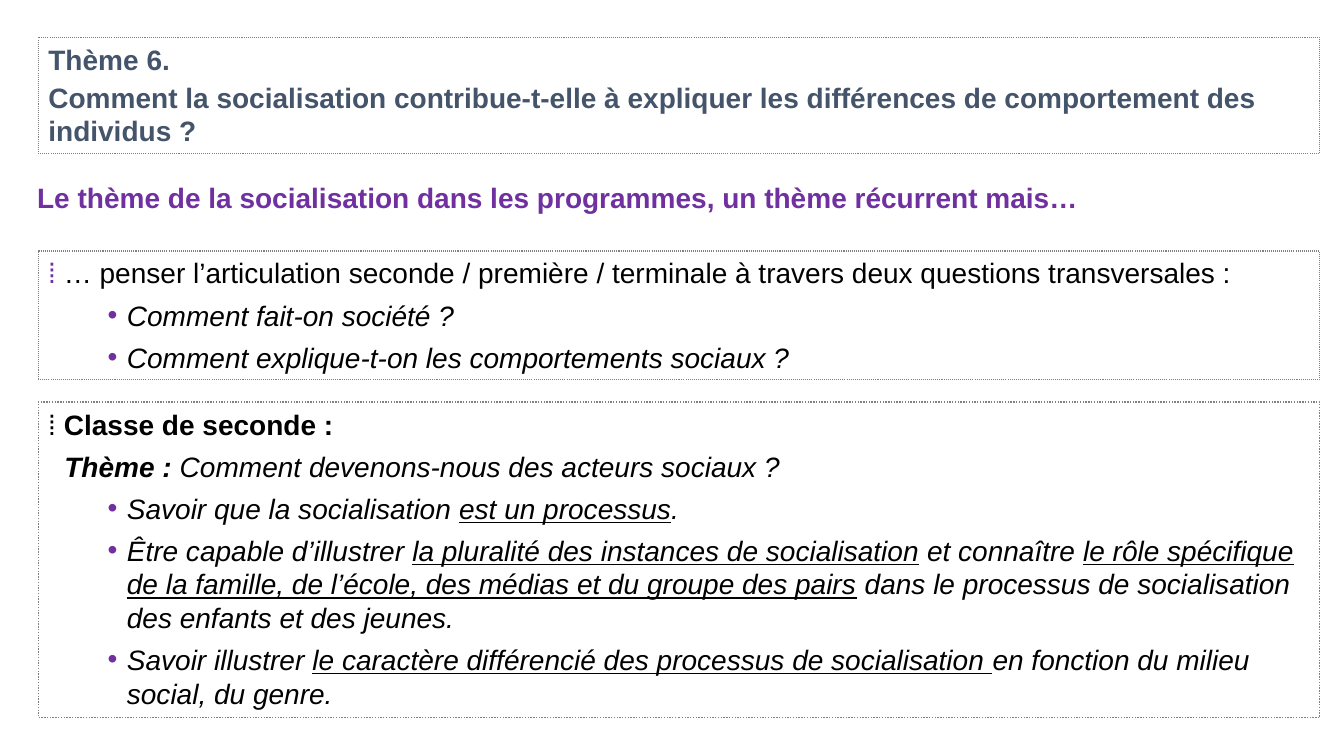
from pptx import Presentation
from pptx.dml.color import RGBColor
from pptx.enum.dml import MSO_LINE
from pptx.enum.shapes import MSO_SHAPE
from pptx.enum.text import MSO_ANCHOR, MSO_AUTO_SIZE, PP_ALIGN
from pptx.oxml import parse_xml
from pptx.oxml.ns import nsdecls
from pptx.util import Inches, Pt

RECT = MSO_SHAPE.RECTANGLE
DOTTED = MSO_LINE.ROUND_DOT
TOP, LEFT = MSO_ANCHOR.TOP, PP_ALIGN.LEFT
NO_FIT = MSO_AUTO_SIZE.NONE

THEME = {
    "font": "Arial", "size": Pt(20), "gap": Pt(6), "title_gap": Pt(3),
    "slate": RGBColor.from_string("44546A"),
    "purple": RGBColor.from_string("7030A0"),
    "black": RGBColor.from_string("000000"),
    "white": RGBColor.from_string("FFFFFF"),
    "grey": RGBColor.from_string("808080"),
}
BOX_LEFT, BOX_WIDTH = Inches(0.38), Inches(12.71)
BULLET_INDENT, BULLET_HANG = Inches(0.78), Inches(-0.19)
THEME_INDENT = Inches(0.16)


def add_text(tf, runs, color="black", bold=False, italic=False,
             gap=THEME["gap"], indent=0, bullet=False):
    """Add a paragraph; runs are (text, overrides) pairs or one string."""
    p = tf.paragraphs[0] if not tf.text else tf.add_paragraph()
    p.alignment, p.space_before = LEFT, gap
    pPr = p._p.get_or_add_pPr()
    pPr.set("marL", str(BULLET_INDENT if bullet else indent))
    pPr.set("indent", str(BULLET_HANG if bullet else 0))
    if bullet:
        ns = nsdecls("a")
        pPr.append(parse_xml(f'<a:buClr {ns}><a:srgbClr val="{THEME["purple"]}"/></a:buClr>'))
        pPr.append(parse_xml(f'<a:buFont {ns} typeface="{THEME["font"]}"/>'))
        pPr.append(parse_xml(f'<a:buChar {ns} char="•"/>'))
    for text, style in [(runs, {})] if isinstance(runs, str) else runs:
        r = p.add_run()
        r.text = text
        r.font.name, r.font.size = THEME["font"], THEME["size"]
        r.font.color.rgb = THEME[style.get("color", color)]
        r.font.bold = style.get("bold", bold)
        r.font.italic = italic
        r.font.underline = style.get("underline", False)


def frame(sp, width=0.75, fill=None):
    """Give a box its dotted outline and top-left text; return its text frame."""
    sp.line.color.rgb, sp.line.width = THEME["grey"], Pt(width)
    sp.line.dash_style = DOTTED
    if fill:
        sp.fill.solid()
        sp.fill.fore_color.rgb = THEME[fill]
    else:
        sp.fill.background()
    tf = sp.text_frame
    tf.word_wrap, tf.auto_size, tf.vertical_anchor = True, NO_FIT, TOP
    return tf


prs = Presentation()
prs.slide_width, prs.slide_height = Inches(13.33), Inches(7.5)
s = prs.slides.add_slide(prs.slide_layouts[5])

# Title box
title = s.shapes.title
title.left, title.top = BOX_LEFT, Inches(0.37)
title.width, title.height = BOX_WIDTH, Inches(1.15)
tf = frame(title)
add_text(tf, "Thème 6.", color="slate", bold=True, gap=0)
add_text(tf, "Comment la socialisation contribue-t-elle à expliquer les différences "
         "de comportement des individus ?", color="slate", bold=True, gap=THEME["title_gap"])

# Heading
heading = s.shapes.add_textbox(Inches(0.27), Inches(1.74), Inches(12.87), Inches(0.44))
heading.text_frame.word_wrap = True
add_text(heading.text_frame, "Le thème de la socialisation dans les programmes, "
         "un thème récurrent mais…", color="purple", bold=True)

# Content boxes: top, height, line width, fill, paragraphs
UNDER = {"underline": True}
BULLET = {"italic": True, "bullet": True}
boxes = [
    (2.49, 1.28, 0.75, None, [
        ([("⁞ ", {"color": "purple"}),
          ("… penser l’articulation seconde / première / terminale à travers "
           "deux questions transversales :", {})], {}),
        ("Comment fait-on société ?", BULLET),
        ("Comment explique-t-on les comportements sociaux ?", BULLET),
    ]),
    (3.99, 3.13, 1, "white", [
        ([("⁞ ", {}), ("Classe de seconde :", {"bold": True})], {}),
        ([("Thème : ", {"bold": True}),
          ("Comment devenons-nous des acteurs sociaux ?", {})],
         {"italic": True, "indent": THEME_INDENT}),
        ([("Savoir que la socialisation ", {}), ("est un processus", UNDER), (".", {})], BULLET),
        ([("Être capable d’illustrer ", {}),
          ("la pluralité des instances de socialisation", UNDER),
          (" et connaître ", {}),
          ("le rôle spécifique de la famille, de l’école, des médias et du groupe des pairs", UNDER),
          (" dans le processus de socialisation des enfants et des jeunes.", {})], BULLET),
        ([("Savoir illustrer ", {}),
          ("le caractère différencié des processus de socialisation ", UNDER),
          ("en fonction du milieu social, du genre.", {})], BULLET),
    ]),
]
for top, height, width, fill, paragraphs in boxes:
    sp = s.shapes.add_shape(RECT, BOX_LEFT, Inches(top), BOX_WIDTH, Inches(height))
    sp.shadow.inherit = False
    tf = frame(sp, width, fill)
    for runs, style in paragraphs:
        add_text(tf, runs, **style)

prs.save("out.pptx")
